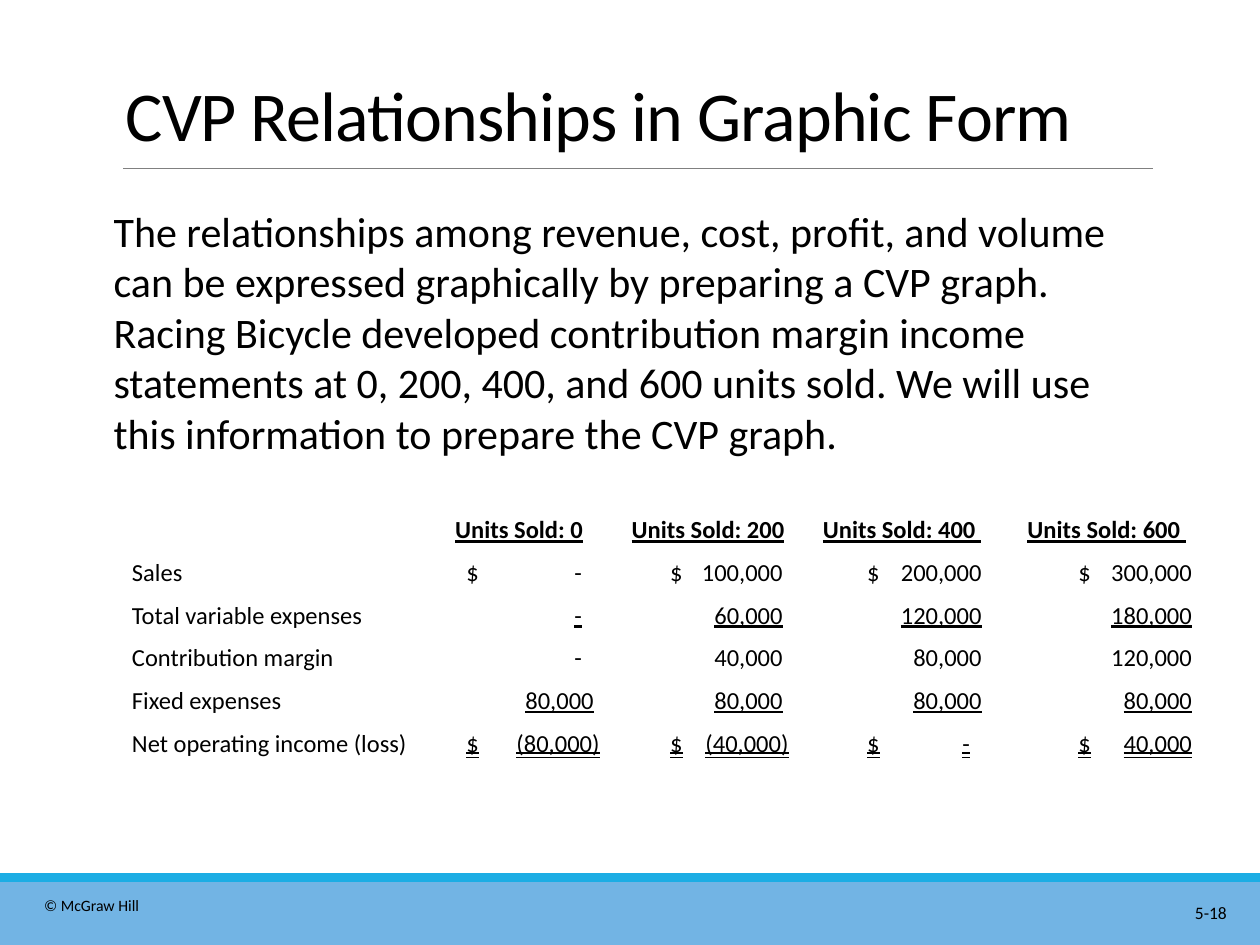
from typing import NamedTuple, Sequence

from lxml.etree import SubElement
from pptx import Presentation
from pptx.dml.color import RGBColor
from pptx.enum.shapes import MSO_CONNECTOR as Link, MSO_SHAPE as Shape
from pptx.enum.text import (MSO_ANCHOR as Anchor, MSO_AUTO_SIZE as Fit,
                            MSO_UNDERLINE as Under, PP_ALIGN as Align)
from pptx.oxml.ns import qn
from pptx.util import Cm, Pt

FONT = "Calibri"
BLACK = "000000"
PAD = 0.25  # side margin of a cell
EDGE = 0.03  # keeps the last tab stop inside the cell
NO_STYLE = "{2D5ABB26-0587-4C30-8999-92F81FD0307C}"


class Band(NamedTuple):
    top: float
    height: float
    color: str


class Note(NamedTuple):
    text: str
    left: float
    top: float
    width: float
    height: float
    size: int
    align: Align = Align.LEFT
    pad: float = PAD


class Column(NamedTuple):
    head: str
    width: float
    start: float  # where the dollar signs and rules begin


class Row(NamedTuple):
    label: str
    values: list[str]
    sign: str = ""
    rule: Under = Under.NONE


BANDS = [Band(17.78, 1.27, "72B4E4"), Band(17.6, 0.18, "1CADE4")]
NOTES = [
    Note("5-18", 21.6, 18.06, 3.38, 0.68, 10, Align.RIGHT),
    Note("© McGraw Hill", 0.64, 17.93, 2.97, 0.63, 9),
    Note("The relationships among revenue, cost, profit, and volume can be "
         "expressed graphically by preparing a CVP graph. Racing Bicycle "
         "developed contribution margin income statements at 0, 200, 400, "
         "and 600 units sold. We will use this information to prepare the "
         "CVP graph.", 2.29, 4.02, 20.95, 5.51, 24, pad=0),
]
COLUMNS = [
    Column("", 6.15, PAD),
    Column("Units Sold: 0", 3.81, 0.84),
    Column("Units Sold: 200", 3.81, 1.14),
    Column("Units Sold: 400 ", 4.01, 1.3),
    Column("Units Sold: 600 ", 4.24, 1.55),
]
ROWS = [
    Row("Sales", ["-", "100,000", "200,000", "300,000"], "$"),
    Row("Total variable expenses", ["-", "60,000", "120,000", "180,000"],
        rule=Under.SINGLE_LINE),
    Row("Contribution margin", ["-", "40,000", "80,000", "120,000"]),
    Row("Fixed expenses", ["80,000"] * 4, rule=Under.SINGLE_LINE),
    Row("Net operating income (loss)",
        ["(80,000)", "(40,000)", "-", "40,000"], "$", Under.DOUBLE_LINE),
]


def rgb(color: str) -> RGBColor:
    return RGBColor.from_string(color)


def style(para, size: int, align: Align = Align.LEFT) -> None:
    para.alignment = align
    font = para.font
    font.name, font.size = FONT, Pt(size)
    font.color.rgb = rgb(BLACK)


def draw_band(slide, band: Band) -> None:
    box = slide.shapes.add_shape(Shape.RECTANGLE, 0, Cm(band.top),
                                 Cm(25.4), Cm(band.height))
    box.shadow.inherit = False
    box.fill.solid()
    box.fill.fore_color.rgb = rgb(band.color)
    box.line.fill.background()


def draw_note(slide, note: Note) -> None:
    box = slide.shapes.add_textbox(Cm(note.left), Cm(note.top),
                                   Cm(note.width), Cm(note.height))
    frame = box.text_frame
    frame.word_wrap = True
    frame.margin_left = frame.margin_right = Cm(note.pad)
    frame.text = note.text
    style(frame.paragraphs[0], note.size, note.align)


def draw_title(slide) -> None:
    title = slide.shapes.title
    title.left, title.top = Cm(2.28), Cm(0.42)
    title.width, title.height = Cm(20.95), Cm(2.85)
    frame = title.text_frame
    frame.auto_size = Fit.NONE
    frame.vertical_anchor = Anchor.BOTTOM
    frame.text = "CVP Relationships in Graphic Form"
    para = frame.paragraphs[0]
    para.line_spacing = 0.85
    style(para, 40)
    para.runs[0].font._element.set("spc", "-50")


def draw_rule(slide) -> None:
    rule = slide.shapes.add_connector(Link.STRAIGHT, Cm(2.48), Cm(3.39),
                                      Cm(23.24), Cm(3.39))
    rule.line.color.rgb = rgb("808080")
    rule.line.width = Pt(0.5)
    SubElement(rule._element.spPr, qn("a:effectLst"))


def add_stops(para, stops: Sequence[float]) -> None:
    """Add right-aligned tab stops, in cm from the start of the text."""
    tabs = SubElement(para._p.get_or_add_pPr(), qn("a:tabLst"))
    for stop in stops:
        SubElement(tabs, qn("a:tab"), pos=str(int(Cm(stop))), algn="r")


def fill_cell(cell, text: str, align: Align = Align.LEFT,
              stops: Sequence[float] = ()):
    cell.fill.background()
    cell.vertical_anchor = Anchor.MIDDLE
    cell.margin_left = cell.margin_right = Cm(PAD)
    cell.text = text
    para = cell.text_frame.paragraphs[0]
    if stops:
        add_stops(para, stops)
    style(para, 14, align)
    return para


def fill_value(cell, row: Row, value: str, col: Column) -> None:
    """Tab the amount to its place and run any underline to the cell's edge."""
    inset = {"-": 0.36, ")": 0}.get(value[-1], 0.12)
    end = col.width - col.start - PAD - EDGE
    tail = "\t" if row.rule != Under.NONE and inset else ""
    stops = [end - inset, end] if tail else [end - inset]
    para = fill_cell(cell, f"{row.sign}\t{value}{tail}", stops=stops)
    cell.margin_left = Cm(col.start)
    para.font.underline = row.rule


def draw_table(slide) -> None:
    wide = sum(col.width for col in COLUMNS)
    tall = 0.86
    count = len(ROWS) + 1
    table = slide.shapes.add_table(count, len(COLUMNS), Cm(2.41), Cm(10.26),
                                   Cm(wide), Cm(tall * count)).table
    table.first_row = table.horz_banding = False
    table._tbl.tblPr.find(qn("a:tableStyleId")).text = NO_STYLE
    for line in table.rows:
        line.height = Cm(tall)
    for i, col in enumerate(COLUMNS):
        table.columns[i].width = Cm(col.width)
        para = fill_cell(table.cell(0, i), col.head, Align.CENTER)
        para.font.bold = para.font.underline = True
    for r, row in enumerate(ROWS, 1):
        fill_cell(table.cell(r, 0), row.label)
        for c, value in enumerate(row.values, 1):
            fill_value(table.cell(r, c), row, value, COLUMNS[c])


def main() -> None:
    deck = Presentation()
    deck.slide_width, deck.slide_height = Cm(25.4), Cm(19.05)
    slide = deck.slides.add_slide(deck.slide_layouts[5])
    for band in BANDS:
        draw_band(slide, band)
    draw_rule(slide)
    draw_title(slide)
    for note in NOTES:
        draw_note(slide, note)
    draw_table(slide)
    deck.save("out.pptx")


if __name__ == "__main__":
    main()
